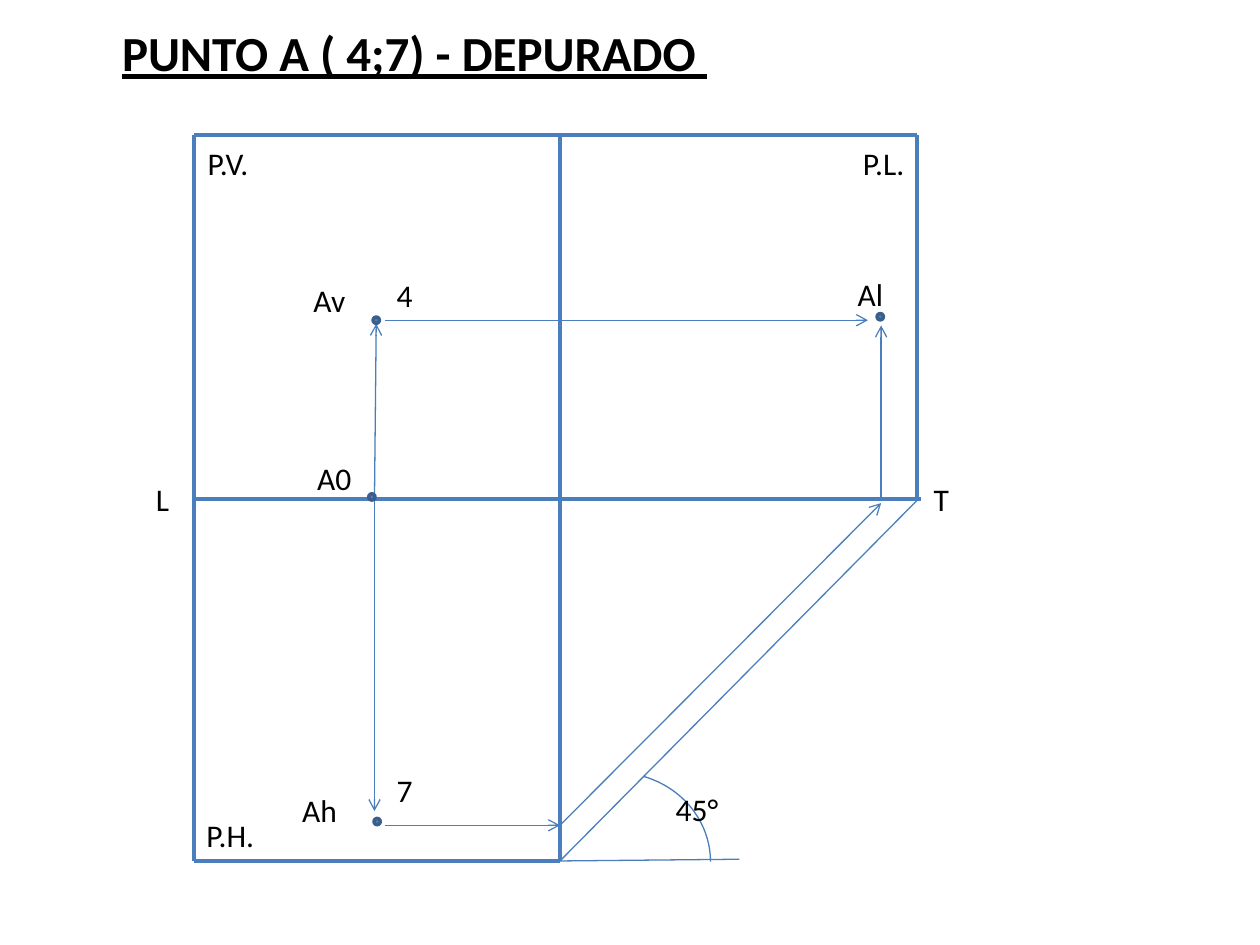
"""Draw the depurado of point A (4;7) on its three planes."""
from typing import NamedTuple

from pptx import Presentation
from pptx.dml.color import RGBColor
from pptx.enum.shapes import MSO_CONNECTOR as Link, MSO_SHAPE as Form
from pptx.enum.text import MSO_AUTO_SIZE as Fit, PP_ALIGN as Align
from pptx.oxml.ns import qn
from pptx.oxml.xmlchemy import OxmlElement as Node
from pptx.util import Pt

BLUE = RGBColor(0x4B, 0x7E, 0xBC)
FILL = RGBColor(0x4F, 0x81, 0xBD)
EDGE = RGBColor(0x3A, 0x5F, 0x8C)
BLACK = RGBColor(0, 0, 0)
FONT = "Calibri"

LEFT, MID, RIGHT = 111, 320, 524
TOP, GROUND, BASE = 77, 285, 492
AXIS, SIDE = 214, 503.5
HIGH, LOW = 183, 471.6
THICK, THIN = 2.25, 0.75
DOT = 3.6


class Line(NamedTuple):
    x1: float
    y1: float
    x2: float
    y2: float
    width: float = THIN
    arrow: bool = False


class Label(NamedTuple):
    text: str
    x: float
    y: float
    width: float
    height: float = 29
    size: float = 18
    title: bool = False
    wrap: bool = True


class Dot(NamedTuple):
    x: float
    y: float


LINES = [
    Line(LEFT, TOP, RIGHT, TOP, THICK),
    Line(LEFT, GROUND, 526.5, GROUND, THICK),
    Line(LEFT, BASE, MID, BASE, THICK),
    Line(LEFT, TOP, LEFT, BASE, THICK),
    Line(MID, TOP, MID, BASE, THICK),
    Line(RIGHT, TOP, RIGHT, GROUND, THICK),
    Line(RIGHT, GROUND + 1, MID, BASE),
    Line(MID, BASE, 422.5, BASE - 1),
    Line(AXIS, GROUND, AXIS, 463.5, arrow=True),
    Line(AXIS, GROUND, 215, 185, arrow=True),
    Line(220, LOW, MID, LOW, arrow=True),
    Line(220, HIGH, 496, HIGH, arrow=True),
    Line(MID, LOW, SIDE, 287.5, arrow=True),
    Line(SIDE, GROUND, SIDE, 186, arrow=True),
]
DOTS = [Dot(215, 183), Dot(215.5, 469.5), Dot(503, 181), Dot(212.5, 284)]
LABELS = [
    Label("PUNTO A ( 4;7) - DEPURADO ", 60, 9.5, 353.5, 41, 28, True),
    Label("P.V.", 111.6, 78.5, 45.5),
    Label("P.H.", 110.8, 462.5, 45.5),
    Label("P.L.", 486, 78.5, 38, 51, wrap=False),
    Label("L", 82, 271, 28),
    Label("T", 526.5, 271, 28),
    Label("45°", 379, 448, 45.5),
    Label("Av", 172, 157, 40.5),
    Label("4", 219.6, 154, 34.5),
    Label("A0", 174.2, 258.5, 43),
    Label("Ah", 165.6, 448.5, 49),
    Label("7", 219.6, 437, 33),
    Label("Al", 483, 153.5, 44.5),
]


def draw_line(slide, line: Line) -> None:
    ends = map(Pt, line[:4])
    link = slide.shapes.add_connector(Link.STRAIGHT, *ends)
    link.line.color.rgb = BLUE
    link.line.width = Pt(line.width)
    props = link.element.spPr
    if line.arrow:
        tail = Node("a:tailEnd")
        tail.set("type", "arrow")
        props.find(qn("a:ln")).append(tail)
    props.append(Node("a:effectLst"))


def draw_dot(slide, dot: Dot) -> None:
    box = map(Pt, (dot.x - DOT / 2, dot.y - DOT / 2, DOT, DOT))
    mark = slide.shapes.add_shape(Form.FLOWCHART_CONNECTOR, *box)
    mark.shadow.inherit = False
    mark.fill.solid()
    mark.fill.fore_color.rgb = FILL
    mark.line.color.rgb = EDGE
    mark.line.width = Pt(2)


def draw_arc(slide) -> None:
    box = map(Pt, (297.4, 441.4, 108.6, 102))
    arc = slide.shapes.add_shape(Form.ARC, *box)
    arc.adjustments[0] = 172.81
    arc.adjustments[1] = 0
    arc.shadow.inherit = False
    arc.fill.background()
    arc.line.color.rgb = BLUE
    arc.line.width = Pt(THIN)


def draw_label(slide, label: Label) -> None:
    box = map(Pt, (label.x, label.y, label.width, label.height))
    frame = slide.shapes.add_textbox(*box).text_frame
    frame.word_wrap = label.wrap
    frame.auto_size = Fit.SHAPE_TO_FIT_TEXT
    para = frame.paragraphs[0]
    para.alignment = Align.CENTER if label.title else Align.LEFT
    run = para.add_run()
    run.text = label.text
    font = run.font
    font.name = FONT
    font.size = Pt(label.size)
    font.color.rgb = BLACK
    font.bold = font.underline = label.title


def main() -> None:
    deck = Presentation()
    deck.slide_width, deck.slide_height = Pt(720), Pt(540)
    slide = deck.slides.add_slide(deck.slide_layouts[6])
    for line in LINES:
        draw_line(slide, line)
    draw_arc(slide)
    for dot in DOTS:
        draw_dot(slide, dot)
    for label in LABELS:
        draw_label(slide, label)
    deck.save("out.pptx")


if __name__ == "__main__":
    main()
